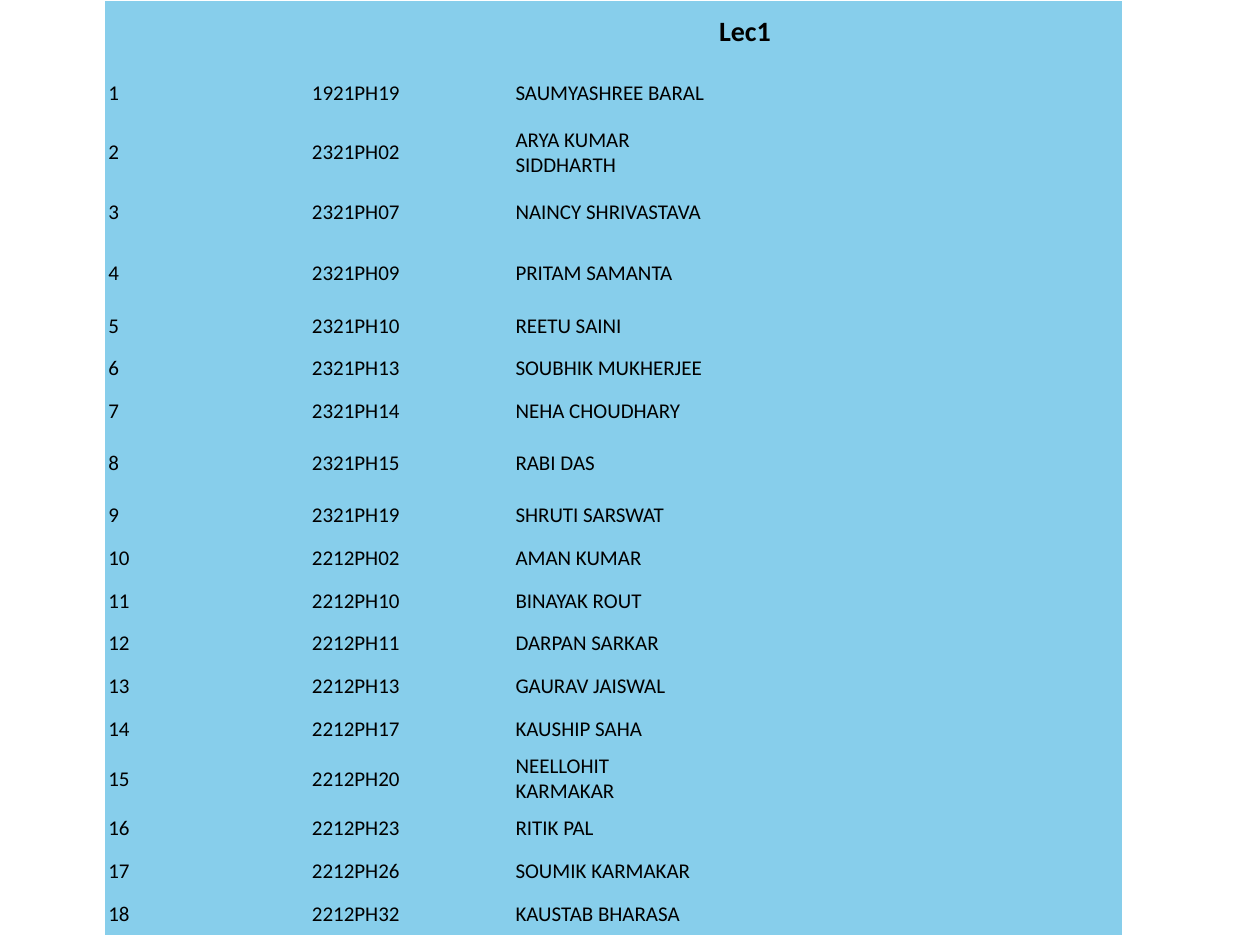
from dataclasses import dataclass

from lxml import etree
from pptx import Presentation
from pptx import util as u
from pptx.dml import color
from pptx.enum import text
from pptx.oxml import ns

COLORS = {"sky": "87CEEB", "ink": "000000"}
FONT = "Calibri"
PLAIN_STYLE = "{2D5ABB26-0587-4C30-8999-92F81FD0307C}"
PAGE_WIDTH, PAGE_HEIGHT = u.Inches(10), u.Inches(7.5)
LEFT, TOP, COLUMN = 0.083, 0.001, 0.1616
COLUMNS, LECTURE_COLUMN = 5, 3
SHORT, MEDIUM, TALL = 0.339, 0.45, 0.49
BODY_SIZE, HEADING_SIZE = 12, 16


@dataclass(frozen=True)
class Student:
    roll: str
    name: str
    height: float = SHORT


STUDENTS = [
    Student("1921PH19", "SAUMYASHREE BARAL", TALL),
    Student("2321PH02", "ARYA KUMAR SIDDHARTH", MEDIUM),
    Student("2321PH07", "NAINCY SHRIVASTAVA", TALL),
    Student("2321PH09", "PRITAM SAMANTA", TALL),
    Student("2321PH10", "REETU SAINI"),
    Student("2321PH13", "SOUBHIK MUKHERJEE"),
    Student("2321PH14", "NEHA CHOUDHARY"),
    Student("2321PH15", "RABI DAS", TALL),
    Student("2321PH19", "SHRUTI SARSWAT"),
    Student("2212PH02", "AMAN KUMAR"),
    Student("2212PH10", "BINAYAK ROUT"),
    Student("2212PH11", "DARPAN SARKAR"),
    Student("2212PH13", "GAURAV JAISWAL"),
    Student("2212PH17", "KAUSHIP SAHA"),
    Student("2212PH20", "NEELLOHIT KARMAKAR", MEDIUM),
    Student("2212PH23", "RITIK PAL"),
    Student("2212PH26", "SOUMIK KARMAKAR"),
    Student("2212PH32", "KAUSTAB BHARASA"),
]


def rgb(name: str) -> color.RGBColor:
    return color.RGBColor.from_string(COLORS[name])


def fill_cell(cell, content: str, size: int, bold: bool) -> None:
    cell.fill.solid()
    cell.fill.fore_color.rgb = rgb("sky")
    cell.vertical_anchor = text.MSO_ANCHOR.MIDDLE
    cell.margin_left = cell.margin_right = u.Inches(0.03)
    cell.margin_top = cell.margin_bottom = u.Inches(0.02)
    para = cell.text_frame.paragraphs[0]
    if not content:
        etree.SubElement(para._p, ns.qn("a:endParaRPr"), sz=str(size * 100))
        return
    span = para.add_run()
    span.text = content
    span.font.name = FONT
    span.font.size = u.Pt(size)
    span.font.bold = bold
    span.font.color.rgb = rgb("ink")


def draw_roster(page, students: list[Student]) -> None:
    heights = [TALL] + [student.height for student in students]
    frame = page.shapes.add_table(
        len(heights), COLUMNS,
        int(PAGE_WIDTH * LEFT), int(PAGE_HEIGHT * TOP),
        int(PAGE_WIDTH * COLUMN * COLUMNS), u.Inches(sum(heights)),
    )
    table = frame.table
    table.first_row = table.horz_banding = False
    table._tbl.tblPr.find(ns.qn("a:tableStyleId")).text = PLAIN_STYLE
    for column in table.columns:
        column.width = int(PAGE_WIDTH * COLUMN)
    for row, height in zip(table.rows, heights):
        row.height = u.Inches(height)

    for index in range(COLUMNS):
        heading = "Lec1" if index == LECTURE_COLUMN else ""
        fill_cell(table.cell(0, index), heading, HEADING_SIZE, True)
    for number, student in enumerate(students, start=1):
        values = [str(number), student.roll, student.name]
        values += [""] * (COLUMNS - len(values))
        for index, value in enumerate(values):
            fill_cell(table.cell(number, index), value, BODY_SIZE, False)


def main() -> None:
    deck = Presentation()
    deck.slide_width, deck.slide_height = PAGE_WIDTH, PAGE_HEIGHT
    page = deck.slides.add_slide(deck.slide_layouts[6])
    draw_roster(page, STUDENTS)
    deck.save("out.pptx")


if __name__ == "__main__":
    main()
